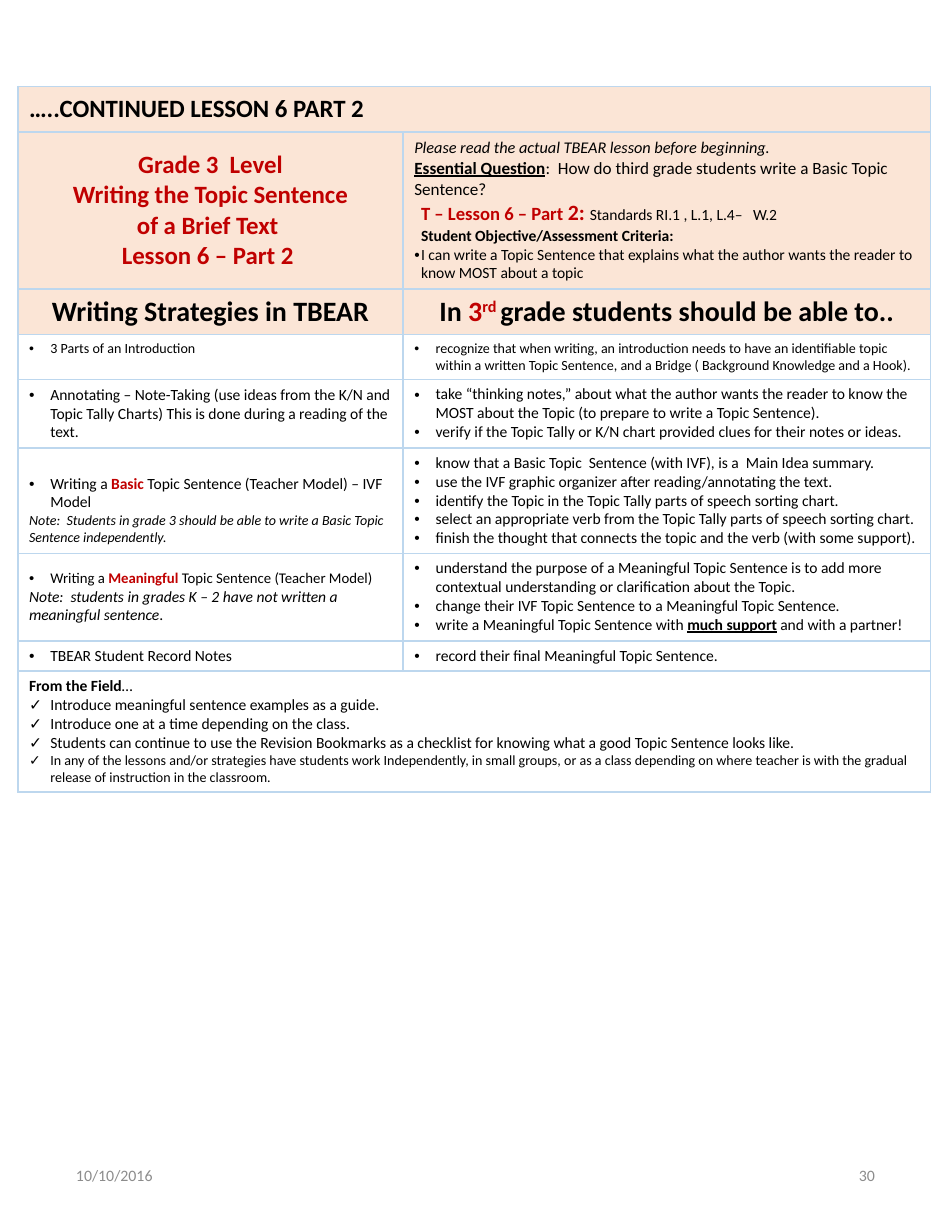
from lxml.etree import SubElement
from pptx import Presentation
from pptx.dml.color import RGBColor
from pptx.enum.text import MSO_ANCHOR as ANCHOR, PP_ALIGN as ALIGN
from pptx.oxml import parse_xml
from pptx.oxml.ns import nsdecls, qn
from pptx.util import Inches, Pt

FONT = "Calibri"
BLACK, RED, GRAY = "000000", "C00000", "8C8C8C"
PEACH, WHITE, BORDER = "FBE5D6", "FFFFFF", "BDD7EE"

B, I = {"bold": True}, {"italic": True}
BU = {"bold": True, "underline": True}
RB = {"bold": True, "color": RED}

# Paragraph styles: left margin, first-line indent, bullet, alignment
STYLES = {
    "plain": (0, 0, None, ALIGN.LEFT),
    "center": (0, 0, None, ALIGN.CENTER),
    "right": (0, 0, None, ALIGN.RIGHT),
    "inset": (0.06, 0, None, ALIGN.LEFT),
    "first": (0, 0.06, None, ALIGN.LEFT),
    "tight": (0.06, -0.06, "•", ALIGN.LEFT),
    "bullet": (0.19, -0.19, "•", ALIGN.LEFT),
    "check": (0.19, -0.19, "✓", ALIGN.LEFT),
}


def para(style, size, *runs):
    """A run is plain text or a (text, format) pair."""
    return style, size, [(r, {}) if isinstance(r, str) else r for r in runs]


def bullets(*texts, size=10, style="bullet"):
    return [para(style, size, t) for t in texts]


COLUMNS = [3.44, 4.71]
# Row: height, fill, cells (one cell spans both columns)
ROWS = [
    (0.41, PEACH, [[para("plain", 16, ("…..CONTINUED LESSON 6 PART 2", B))]]),
    (1.4, PEACH, [
        [para("center", 16, (t, RB)) for t in (
            "Grade 3  Level", "Writing the Topic Sentence",
            "of a Brief Text ", "Lesson 6 – Part 2 ")],
        [para("plain", 10.5, ("Please read the actual TBEAR lesson before beginning.", I)),
         para("plain", 11, ("Essential Question", BU),
              ":  How do third grade students write a Basic Topic Sentence?"),
         para("inset", 10, ("T – Lesson 6 – Part ", {**RB, "size": 12}),
              ("2: ", {**RB, "size": 14}), "Standards RI.1 , L.1, L.4–   W.2"),
         para("first", 10, ("Student Objective/Assessment Criteria:", B)),
         para("tight", 10, "I can write a Topic Sentence that explains what the author "
              "wants the reader to know MOST about a topic")]]),
    (0.4, PEACH, [
        [para("center", 18, ("Writing Strategies in TBEAR", B))],
        [para("center", 18, ("In ", B), ("3", RB), ("rd ", {**RB, "raised": True}),
              ("grade students should be able to..", B))]]),
    (0.4, WHITE, [
        bullets("3 Parts of an Introduction", size=9),
        bullets("recognize that when writing, an introduction needs to have an identifiable "
                "topic within a written Topic Sentence, and a Bridge ( Background Knowledge "
                "and a Hook).", size=9)]),
    (0.61, WHITE, [
        bullets("Annotating – Note-Taking (use ideas from the K/N and Topic Tally Charts) "
                "This is done during a reading of the text."),
        bullets("take “thinking notes,” about what the author wants the reader to know the "
                "MOST about the Topic (to prepare to write a Topic Sentence).",
                "verify if the Topic Tally or K/N chart provided clues for their notes or "
                "ideas.")]),
    (0.94, WHITE, [
        [para("bullet", 10, "Writing a ", ("Basic ", RB),
              "Topic Sentence (Teacher Model) – IVF Model"),
         para("plain", 9, ("Note:  Students in grade 3 should be able to write a Basic Topic "
                           "Sentence independently.", I))],
        bullets("know that a Basic Topic  Sentence (with IVF), is a  Main Idea summary.",
                "use the IVF graphic organizer after reading/annotating the text.",
                "identify the Topic in the Topic Tally parts of speech sorting chart.",
                "select an appropriate verb from the Topic Tally parts of speech sorting chart.",
                "finish the thought that connects the topic and the verb (with some support).")]),
    (0.78, WHITE, [
        [para("bullet", 9.5, "Writing a ", ("Meaningful ", RB),
              "Topic Sentence (Teacher Model)"),
         para("plain", 10, ("Note:  students in grades K – 2 have not written a meaningful "
                            "sentence", I), ".")],
        bullets("understand the purpose of a Meaningful Topic Sentence is to add more "
                "contextual understanding or clarification about the Topic.",
                "change their IVF Topic Sentence to a Meaningful Topic Sentence.")
        + [para("bullet", 10, "write a Meaningful Topic Sentence with ",
                ("much support", BU), (" ", B), "and with a partner!")]]),
    (0.27, WHITE, [bullets("TBEAR Student Record Notes"),
                   bullets("record their final Meaningful Topic Sentence.")]),
    (1.08, WHITE, [
        [para("plain", 10, ("From the Field", B), "…")]
        + bullets("Introduce meaningful sentence examples as a guide.",
                  "Introduce one at a time depending on the class.",
                  "Students can continue to use the Revision Bookmarks as a checklist for "
                  "knowing what a good Topic Sentence looks like.", style="check")
        + bullets("In any of the lessons and/or strategies have students work Independently, "
                  "in small groups, or as a class depending on where teacher is with the "
                  "gradual release of instruction in the classroom.", size=9, style="check")]),
]
TOP_ANCHORED = [(3, 0), (8, 0)]
TOP_MARGINS = {(5, 0): 0.22}  # keeps the Basic strategy level with its steps
FOOTERS = [(6, "right", "30"), (0.58, "plain", "10/10/2016")]


def rgb(value):
    return RGBColor.from_string(value)


def write(tf, paras, color=BLACK):
    for i, (style, size, runs) in enumerate(paras):
        p = tf.paragraphs[0] if i == 0 else tf.add_paragraph()
        margin, indent, mark, p.alignment = STYLES[style]
        pPr = p._p.get_or_add_pPr()
        pPr.set("marL", str(Inches(margin)))
        pPr.set("indent", str(Inches(indent)))
        if mark:
            SubElement(pPr, qn("a:buFont"), typeface="Arial")
            SubElement(pPr, qn("a:buChar"), char=mark)
        else:
            SubElement(pPr, qn("a:buNone"))
        for text, extra in runs:
            r = p.add_run()
            r.text = text
            fmt = {"name": FONT, "size": size, "bold": False, "color": color, **extra}
            if fmt.pop("raised", False):
                r._r.get_or_add_rPr().set("baseline", "30000")
            r.font.color.rgb = rgb(fmt.pop("color"))
            fmt["size"] = Pt(fmt["size"])
            for name, value in fmt.items():
                setattr(r.font, name, value)


def add_borders(cell):
    tcPr = cell._tc.get_or_add_tcPr()
    for i, side in enumerate("LRTB"):
        tcPr.insert(i, parse_xml(
            f'<a:ln{side} {nsdecls("a")} w="{Pt(1)}"><a:solidFill>'
            f'<a:srgbClr val="{BORDER}"/></a:solidFill></a:ln{side}>'))


def add_lesson_table(s):
    height = sum(row[0] for row in ROWS)
    table = s.shapes.add_table(len(ROWS), len(COLUMNS), Inches(0.16), Inches(0.77),
                               Inches(sum(COLUMNS)), Inches(height)).table
    table.first_row = table.horz_banding = False
    for column, width in zip(table.columns, COLUMNS):
        column.width = Inches(width)
    for i, (height, fill, cells) in enumerate(ROWS):
        table.rows[i].height = Inches(height)
        for j in range(len(COLUMNS)):
            cell = table.cell(i, j)
            cell.fill.solid()
            cell.fill.fore_color.rgb = rgb(fill)
            add_borders(cell)
        if len(cells) == 1:
            table.cell(i, 0).merge(table.cell(i, 1))
        for j, paras in enumerate(cells):
            cell = table.cell(i, j)
            at_top = (i, j) in TOP_ANCHORED or (fill == WHITE and j == 1)
            cell.vertical_anchor = ANCHOR.TOP if at_top else ANCHOR.MIDDLE
            cell.margin_top = Inches(TOP_MARGINS.get((i, j), 0.05))
            write(cell.text_frame, paras)


def add_footer(s, left, style, text):
    tf = s.shapes.add_textbox(Inches(left), Inches(10.2), Inches(1.91), Inches(0.59)).text_frame
    tf.word_wrap = True
    tf.vertical_anchor = ANCHOR.MIDDLE
    write(tf, [para(style, 10.2, text)], GRAY)


def main():
    prs = Presentation()
    prs.slide_width, prs.slide_height = Inches(8.5), Inches(11)
    s = prs.slides.add_slide(prs.slide_layouts[6])
    add_lesson_table(s)
    for footer in FOOTERS:
        add_footer(s, *footer)
    prs.save("out.pptx")


if __name__ == "__main__":
    main()
